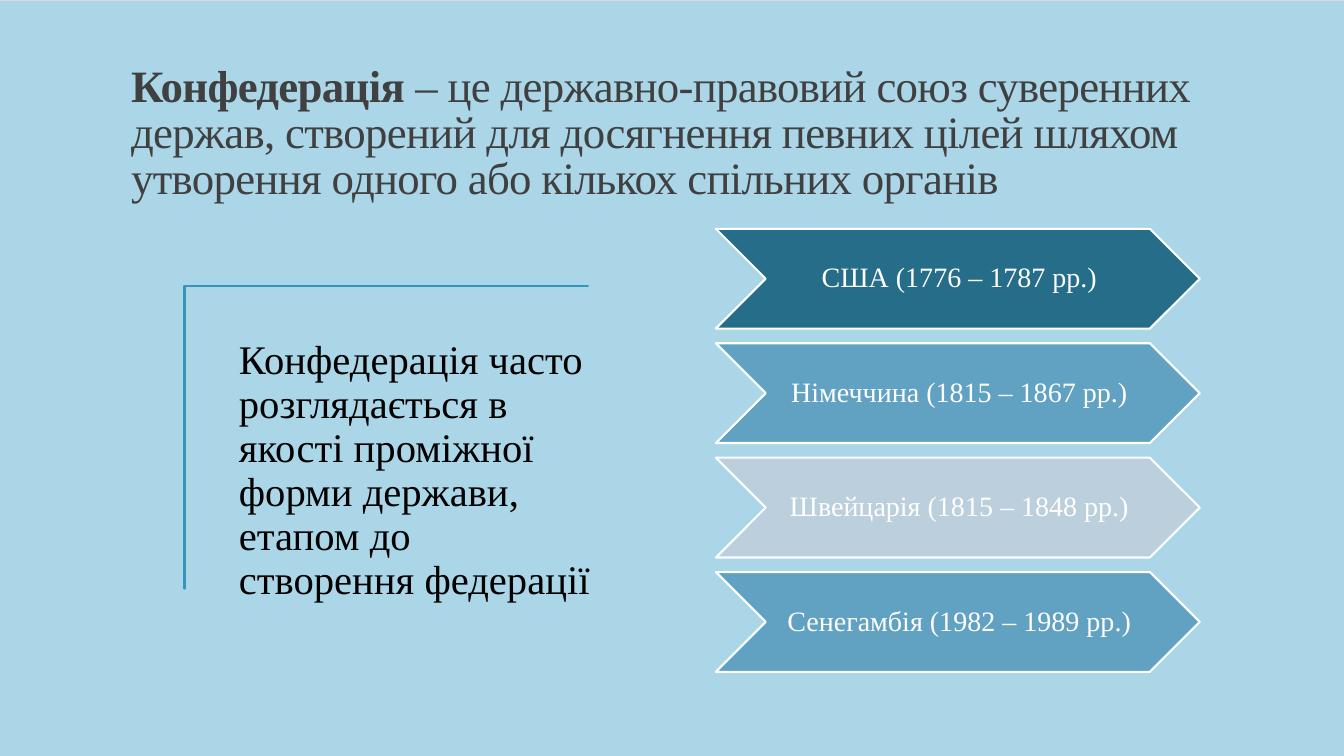
from pptx import Presentation
from pptx import util as u
from pptx.dml.color import RGBColor
from pptx.enum import dml, shapes, text

FONT = "Times New Roman"
HEX = {
    "sky": "AAD6E7", "mist": "D9D9D9", "ink": "404040", "black": "000000",
    "white": "FFFFFF", "teal": "3494BA", "deep": "266D8A",
    "blue": "61A2C3", "pale": "BBCFDD",
}
TERM = "Конфедерація"
MEANING = (" – це державно-правовий союз суверенних держав, створений для "
           "досягнення певних цілей шляхом утворення одного або кількох "
           "спільних органів")
NOTE = ("Конфедерація часто розглядається в якості проміжної форми держави, "
        "етапом до створення федерації")
STATES = [
    ("США (1776 – 1787 рр.)", "deep"),
    ("Німеччина (1815 – 1867 рр.)", "blue"),
    ("Швейцарія (1815 – 1848 рр.)", "pale"),
    ("Сенегамбія (1982 – 1989 рр.)", "blue"),
]
LEFT, TOP, WIDE, HIGH, STEP = 7.1, 2.27, 4.8, 0.99, 1.135


def tint(name):
    return RGBColor.from_string(HEX[name])


def box(*sides):
    return [u.Inches(side) for side in sides]


def style(part, size, color, align, lead):
    part.alignment = align
    part.line_spacing = lead
    for run in part.runs:
        run.font.name = FONT
        run.font.size = u.Pt(size)
        run.font.color.rgb = tint(color)


def frame(shape, pads, anchor):
    """Set wrapping, insets (left, top, right, bottom) and anchor."""
    area = shape.text_frame
    area.word_wrap = True
    area.auto_size = text.MSO_AUTO_SIZE.NONE
    area.vertical_anchor = anchor
    (area.margin_left, area.margin_top,
     area.margin_right, area.margin_bottom) = box(*pads)
    return area


def paint(shape, fill, line):
    shape.shadow.inherit = False
    shape.fill.solid()
    shape.fill.fore_color.rgb = tint(fill)
    shape.line.color.rgb = tint(line)
    shape.line.width = u.Pt(1.5)


def head(slide):
    title = slide.shapes.title
    title.left, title.top, title.width, title.height = box(1.2, 0.48, 11, 1.59)
    area = frame(title, (0.1, 0.05, 0.1, 0.05), text.MSO_ANCHOR.BOTTOM)
    area.text = TERM
    part = area.paragraphs[0]
    part.add_run().text = MEANING
    style(part, 32, "ink", text.PP_ALIGN.LEFT, 0.85)
    for run, bold in zip(part.runs, (True, False)):
        run.font.bold = bold
        run._r.get_or_add_rPr().set("spc", "-50")


def angle(slide, left, top, wide, high, arm):
    """Draw an L-shaped bar with its corner at the top left."""
    pen = slide.shapes.build_freeform(0, 0, scale=u.Inches(1))
    pen.add_line_segments([(wide, 0), (wide, arm), (arm, arm),
                           (arm, high), (0, high)], close=True)
    paint(pen.convert_to_shape(*box(left, top)), "teal", "teal")


def note(slide):
    angle(slide, 1.83, 2.84, 4.18, 2.51, 0.4)
    label = slide.shapes.add_textbox(*box(2.25, 3.25, 3.77, 3.31))
    area = frame(label, [0.12] * 4, text.MSO_ANCHOR.TOP)
    area.text = NOTE
    style(area.paragraphs[0], 29, "black", text.PP_ALIGN.LEFT, 0.9)


def arrow(slide, row, words, fill):
    place = box(LEFT, TOP + row * STEP, WIDE, HIGH)
    shape = slide.shapes.add_shape(shapes.MSO_SHAPE.CHEVRON, *place)
    paint(shape, fill, "white")
    area = frame(shape, (0.03, 0.01, 0, 0.01), text.MSO_ANCHOR.MIDDLE)
    area.text = words
    style(area.paragraphs[0], 20, "white", text.PP_ALIGN.CENTER, 0.9)


def main():
    deck = Presentation()
    deck.slide_width, deck.slide_height = box(13.33, 7.5)
    slide = deck.slides.add_slide(deck.slide_layouts[5])
    back = slide.background.fill
    back.patterned()
    back.pattern = dml.MSO_PATTERN.DARK_HORIZONTAL
    back.fore_color.rgb = tint("sky")
    back.back_color.rgb = tint("mist")
    head(slide)
    note(slide)
    for row, (words, fill) in enumerate(STATES):
        arrow(slide, row, words, fill)
    deck.save("out.pptx")


if __name__ == "__main__":
    main()
